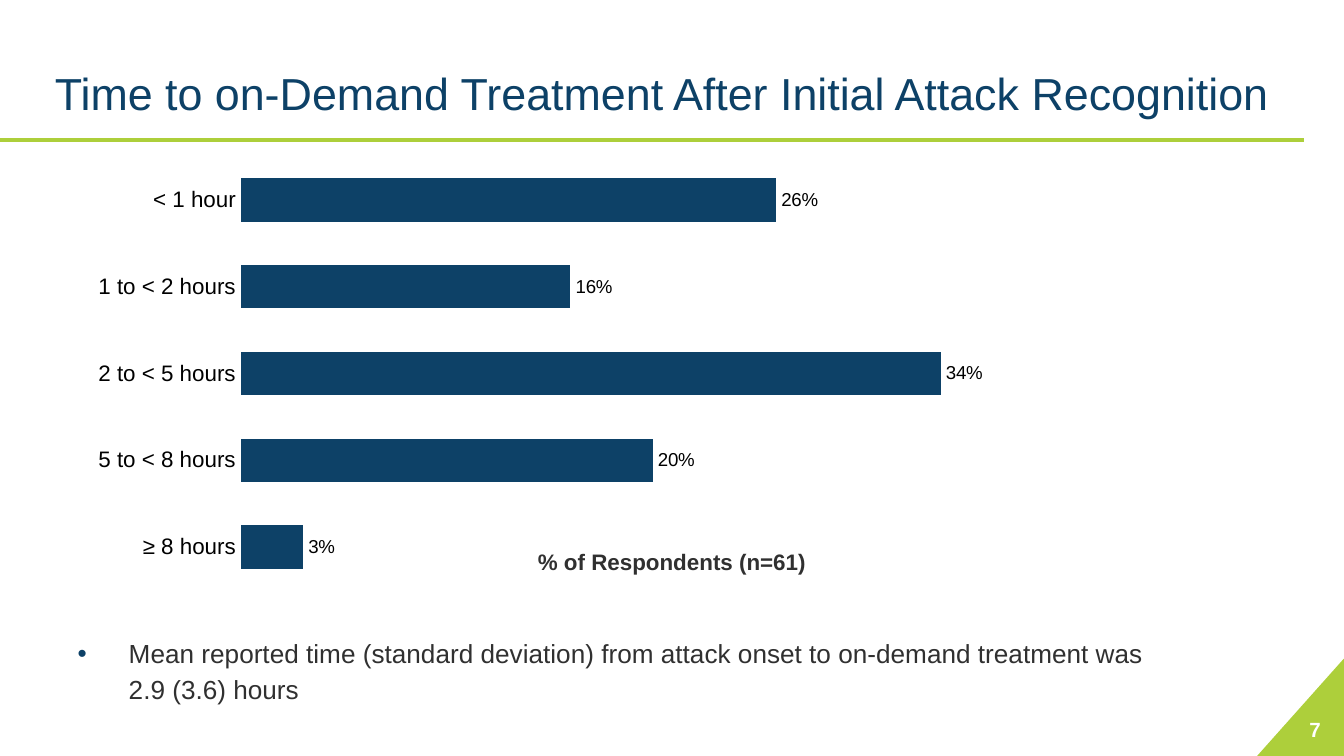
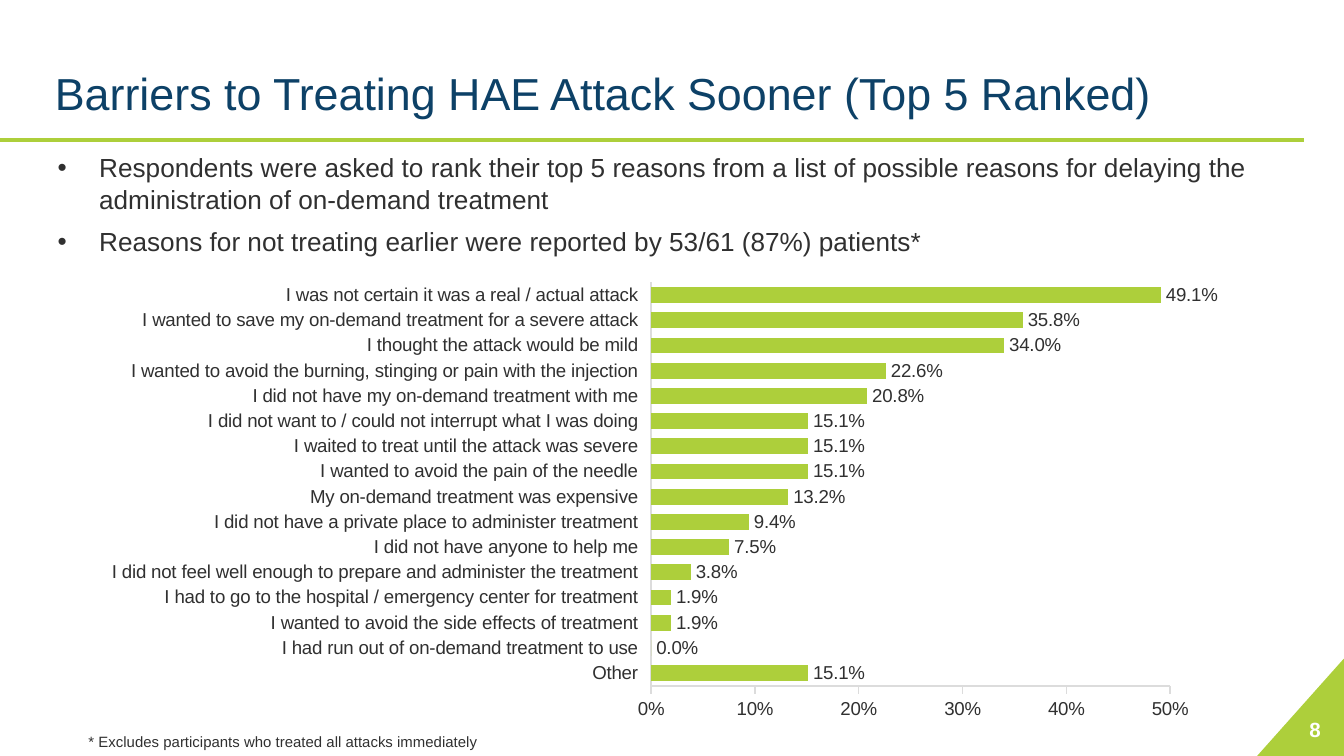
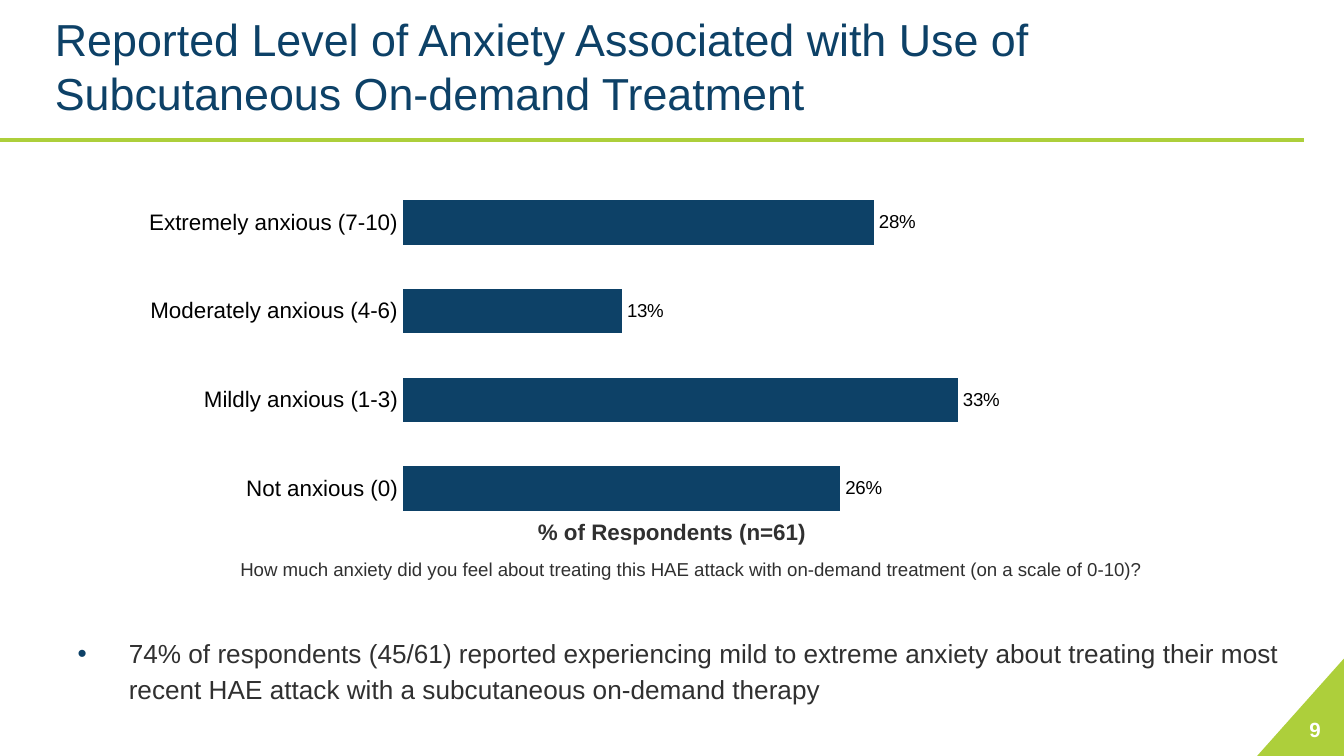
from dataclasses import dataclass

from lxml.etree import SubElement
from pptx import Presentation
from pptx.chart.data import CategoryChartData
from pptx.dml.color import RGBColor
from pptx.enum.chart import XL_CHART_TYPE, XL_LABEL_POSITION, XL_TICK_LABEL_POSITION, XL_TICK_MARK
from pptx.enum.shapes import MSO_CONNECTOR, MSO_SHAPE
from pptx.enum.text import MSO_ANCHOR, PP_ALIGN
from pptx.oxml.ns import qn
from pptx.util import Inches, Pt

# The grid has square modules: 100 columns by 56.25 rows.
MODULE = Inches(0.1)
COLUMNS, ROWS = 100, 56.25


@dataclass(frozen=True)
class Theme:
    font: str = "Arial"
    navy: str = "0D4167"
    lime: str = "ADCF3B"
    ink: str = "303030"
    black: str = "000000"
    white: str = "FFFFFF"
    axis: str = "DCDCDC"
    title: int = 24
    body: int = 14
    caption: int = 12
    page: int = 11
    small: int = 10
    footnote: int = 8


def grid(*lengths):
    return [int(length * MODULE) for length in lengths]


class Deck:
    """Holds the theme and the current slide; places are in grid modules."""

    def __init__(self, theme):
        self.theme = theme
        self.presentation = Presentation()
        self.presentation.slide_width, self.presentation.slide_height = grid(COLUMNS, ROWS)
        self.slide = None

    def start_slide(self, title, page):
        theme = self.theme
        self.slide = self.presentation.slides.add_slide(self.presentation.slide_layouts[6])
        self.corner()
        self.rule(0, 97, 10.4)
        self.text((3.1, 2, 93.8, 7.4), [title], theme.title, theme.navy, anchor=MSO_ANCHOR.BOTTOM)
        self.text((95.7, 52.8, 4.3, 3), [str(page)], theme.page, theme.white, bold=True,
                  align=PP_ALIGN.CENTER, anchor=MSO_ANCHOR.MIDDLE)

    def corner(self):
        triangle = self.slide.shapes.add_shape(MSO_SHAPE.RIGHT_TRIANGLE, *grid(93, 49.4, 7.4, 6.6))
        triangle.rotation = 270
        triangle.shadow.inherit = False
        triangle.fill.solid()
        triangle.fill.fore_color.rgb = RGBColor.from_string(self.theme.lime)
        triangle.line.fill.background()

    def rule(self, left, right, row):
        rule = self.slide.shapes.add_connector(MSO_CONNECTOR.STRAIGHT, *grid(left, row, right, row))
        self.stroke(rule.line, self.theme.lime, 2)
        SubElement(rule._element.spPr, qn("a:effectLst"))

    def stroke(self, line, color, width):
        line.color.rgb = RGBColor.from_string(color)
        line.width = Pt(width)

    def style(self, font, size, color, bold=False):
        font.name, font.size, font.bold = self.theme.font, Pt(size), bold
        font.color.rgb = RGBColor.from_string(color)

    def text(self, place, paragraphs, size, color=None, bold=False, align=PP_ALIGN.LEFT,
             anchor=MSO_ANCHOR.TOP, indent=0, bullet_color=None, before=0, spacing=1.0):
        """Adds a text box; an indent makes its paragraphs bullets."""
        color = color or self.theme.ink
        frame = self.slide.shapes.add_textbox(*grid(*place)).text_frame
        frame.word_wrap = True
        frame.vertical_anchor = anchor
        for index, wording in enumerate(paragraphs):
            paragraph = frame.add_paragraph() if index else frame.paragraphs[0]
            paragraph.text = wording
            paragraph.alignment = align
            paragraph.line_spacing = spacing
            paragraph.space_before = Pt(before)
            if indent:
                self.bullet(paragraph, indent, bullet_color or color)
            self.style(paragraph.font, size, color, bold)

    def bullet(self, paragraph, indent, color):
        properties = paragraph._p.get_or_add_pPr()
        [hang] = grid(indent)
        properties.set("marL", str(hang))
        properties.set("indent", str(-hang))
        SubElement(SubElement(properties, qn("a:buClr")), qn("a:srgbClr"), val=color)
        SubElement(properties, qn("a:buFont"), typeface=self.theme.font)
        SubElement(properties, qn("a:buChar"), char="•")

    def finding(self, wording, width):
        self.text((4.8, 46.6, width, 5.5), [wording], self.theme.body, indent=3.8,
                  bullet_color=self.theme.navy, spacing=1.15)

    def respondents(self, row):
        self.text((38.5, row, 23, 3), ["% of Respondents (n=61)"], self.theme.caption,
                  bold=True, align=PP_ALIGN.CENTER)

    def bars(self, place, shares, fill, color, gap, label_format="0%", category_size=None):
        """Adds a bar chart of shares listed from top to bottom, with the value axis hidden."""
        theme = self.theme
        data = CategoryChartData(number_format=label_format)
        data.categories = list(reversed(shares))
        data.add_series("Series 1", list(reversed(shares.values())))
        chart = self.slide.shapes.add_chart(XL_CHART_TYPE.BAR_CLUSTERED, *grid(*place), data).chart
        chart.has_legend = chart.has_title = False
        self.style(chart.font, theme.caption, color)

        plot = chart.plots[0]
        plot.gap_width = gap
        plot.vary_by_categories = False
        series_fill = plot.series[0].format.fill
        series_fill.solid()
        series_fill.fore_color.rgb = RGBColor.from_string(fill)

        plot.has_data_labels = True
        labels = plot.data_labels
        labels.show_value = True
        labels.position = XL_LABEL_POSITION.OUTSIDE_END
        labels.number_format, labels.number_format_is_linked = label_format, False
        self.style(labels.font, theme.small, color)

        categories, values = chart.category_axis, chart.value_axis
        categories.major_tick_mark = XL_TICK_MARK.NONE
        categories.format.line.fill.background()
        self.style(categories.tick_labels.font, category_size or theme.caption, color)
        values.minimum_scale, values.maximum_scale = 0, 0.5
        values.has_major_gridlines = False
        values.visible = False
        return chart

    def show_axes(self, chart):
        theme = self.theme
        categories, values = chart.category_axis, chart.value_axis
        categories.tick_label_position = XL_TICK_LABEL_POSITION.LOW
        values.visible = True
        values.major_unit = 0.1
        values.major_tick_mark = XL_TICK_MARK.OUTSIDE
        values.tick_labels.number_format = "0%"
        values.tick_labels.number_format_is_linked = False
        self.style(values.tick_labels.font, theme.small, theme.ink)
        for axis in (categories, values):
            self.stroke(axis.format.line, theme.axis, 0.75)

    def fix_plot(self, chart, **shares):
        """Sets the inner plot area as x, y, w and h shares of the chart."""
        area = chart._chartSpace.chart.plotArea
        for layout in area.findall(qn("c:layout")):
            area.remove(layout)
        layout = SubElement(area, qn("c:layout"))
        area.insert(0, layout)
        manual = SubElement(layout, qn("c:manualLayout"))
        SubElement(manual, qn("c:layoutTarget"), val="inner")
        for side in "xy":
            SubElement(manual, qn(f"c:{side}Mode"), val="edge")
        for side, share in shares.items():
            SubElement(manual, qn(f"c:{side}"), val=str(share))


def time_to_treatment(deck):
    theme = deck.theme
    deck.start_slide("Time to on-Demand Treatment After Initial Attack Recognition", 7)
    delays = {
        "< 1 hour": 0.26,
        "1 to < 2 hours": 0.16,
        "2 to < 5 hours": 0.34,
        "5 to < 8 hours": 0.2,
        "≥ 8 hours": 0.03,
    }
    deck.bars((5.5, 11, 90.8, 33.6), delays, theme.navy, theme.black, gap=100)
    deck.finding("Mean reported time (standard deviation) from attack onset to on-demand "
                 "treatment was\v2.9 (3.6) hours", 85.3)
    deck.respondents(40.3)


def barriers(deck):
    theme = deck.theme
    deck.start_slide("Barriers to Treating HAE Attack Sooner (Top 5 Ranked)", 8)
    reasons = {
        "I was not certain it was a real / actual attack": 0.491,
        "I wanted to save my on-demand treatment for a severe attack": 0.358,
        "I thought the attack would be mild": 0.34,
        "I wanted to avoid the burning, stinging or pain with the injection": 0.226,
        "I did not have my on-demand treatment with me": 0.208,
        "I did not want to / could not interrupt what I was doing": 0.151,
        "I waited to treat until the attack was severe": 0.151,
        "I wanted to avoid the pain of the needle": 0.151,
        "My on-demand treatment was expensive": 0.132,
        "I did not have a private place to administer treatment": 0.094,
        "I did not have anyone to help me": 0.075,
        "I did not feel well enough to prepare and administer the treatment": 0.038,
        "I had to go to the hospital / emergency center for treatment": 0.019,
        "I wanted to avoid the side effects of treatment": 0.019,
        "I had run out of on-demand treatment to use": 0,
        "Other": 0.151,
    }
    chart = deck.bars((-6, 15.1, 99, 39.5), reasons, theme.lime, theme.ink, gap=60,
                      label_format="0.0%", category_size=theme.small)
    deck.show_axes(chart)
    deck.fix_plot(chart, x=0.55, y=0.15, w=0.39, h=0.76)
    deck.text((3.3, 10.8, 96.7, 8.9), [
        "Respondents were asked to rank their top 5 reasons from a list of possible reasons "
        "for delaying the administration of on-demand treatment",
        "Reasons for not treating earlier were reported by 53/61 (87%) patients*",
    ], theme.body, indent=3.1, before=6)
    deck.text((5.6, 54, 42.8, 2.25), ["* Excludes participants who treated all attacks immediately"],
              theme.footnote)


def anxiety(deck):
    theme = deck.theme
    deck.start_slide("Reported Level of Anxiety Associated with Use of "
                     "Subcutaneous On-demand Treatment", 9)
    deck.finding("74% of respondents (45/61) reported experiencing mild to extreme anxiety about "
                 "treating their most recent HAE attack with a subcutaneous on-demand therapy", 93.8)
    levels = {
        "Extremely anxious (7-10)": 0.28,
        "Moderately anxious (4-6)": 0.13,
        "Mildly anxious (1-3)": 0.33,
        "Not anxious (0)": 0.26,
    }
    deck.bars((9.4, 12.7, 84.8, 27.5), levels, theme.navy, theme.black, gap=100)
    deck.respondents(38.1)
    deck.text((16.9, 41, 77.3, 2.7), [
        "How much anxiety did you feel about treating this HAE attack with on-demand treatment "
        "(on a scale of 0-10)?"], theme.small)


def main():
    deck = Deck(Theme())
    for build in (time_to_treatment, barriers, anxiety):
        build(deck)
    deck.presentation.save("out.pptx")


if __name__ == "__main__":
    main()
